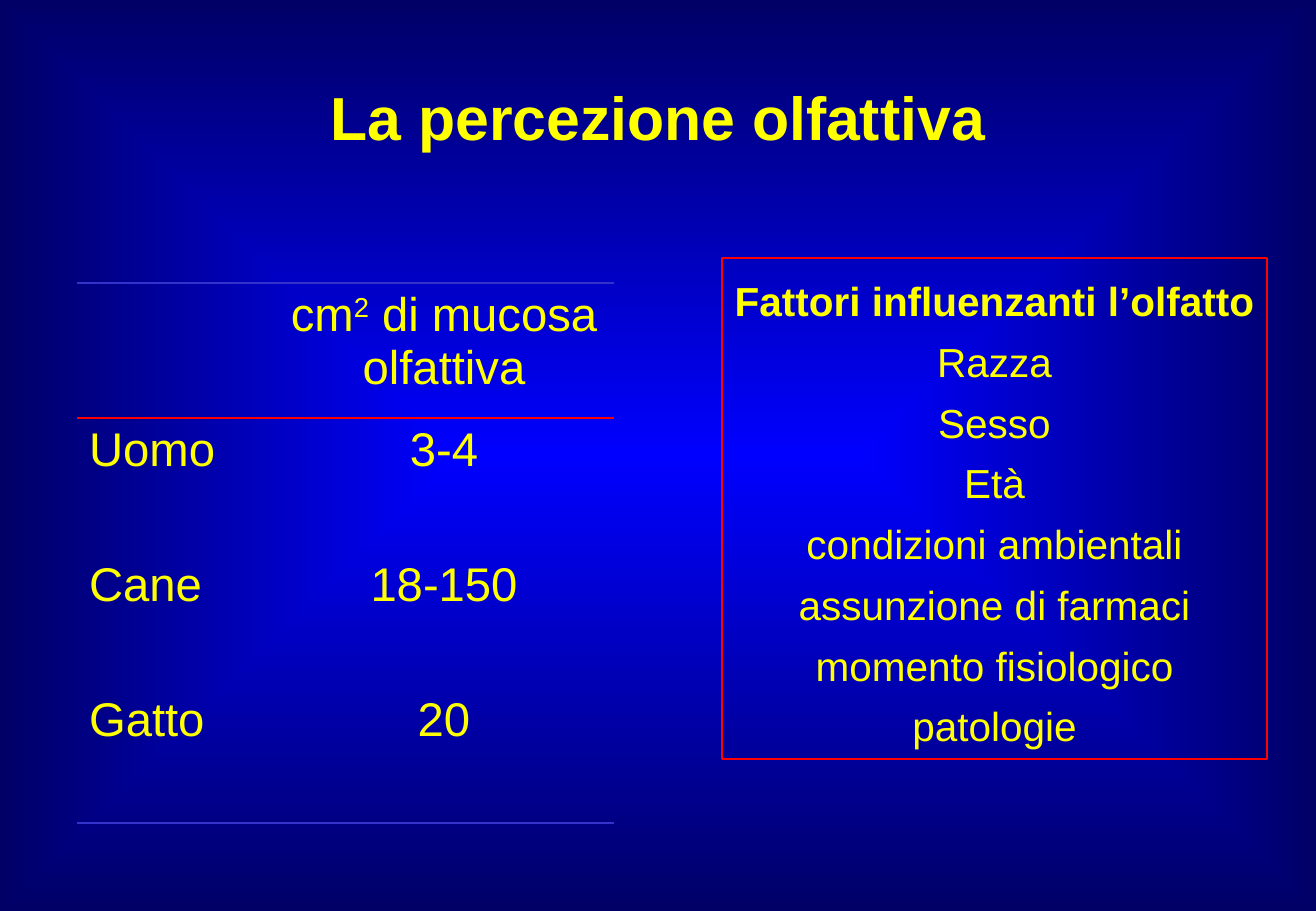
from lxml.etree import SubElement
from pptx import Presentation
from pptx.dml.color import RGBColor
from pptx.enum.shapes import MSO_SHAPE
from pptx.enum.text import MSO_ANCHOR, MSO_AUTO_SIZE, PP_ALIGN
from pptx.oxml import parse_xml
from pptx.oxml.ns import nsdecls, qn
from pptx.util import Pt

PX = 7526  # EMU per px
THEME = {
    "font": "Arial", "text": "FFFF00", "red": "FF0000", "rule": "3333CC",
    "glow": "0000FF", "edge": "000066",
    "title": 36, "cell": 28, "list": 24,
}
NO_GRID = "{2D5ABB26-0587-4C30-8999-92F81FD0307C}"


def style(run, size, bold=False):
    look = {"name": THEME["font"], "size": Pt(THEME[size]), "bold": bold}
    for key, value in look.items():
        setattr(run.font, key, value)
    run.font.color.rgb = RGBColor.from_string(THEME["text"])


def border(cell, side, color):
    """Give one side of a cell a 1 pt line, or none when color is None."""
    line = SubElement(cell._tc.get_or_add_tcPr(), qn(f"a:ln{side}"), w=str(Pt(1)))
    if color:
        fill = SubElement(line, qn("a:solidFill"))
        SubElement(fill, qn("a:srgbClr"), val=THEME[color])
    else:
        SubElement(line, qn("a:noFill"))


deck = Presentation()
deck.slide_width, deck.slide_height = 1316 * PX, 911 * PX
slide = deck.slides.add_slide(deck.slide_layouts[5])

# Background glow from the centre
fill = slide.background.fill
fill.gradient()
for stop, name, pos in zip(fill.gradient_stops, ("glow", "edge"), (0, 1)):
    stop.color.rgb = RGBColor.from_string(THEME[name])
    stop.position = pos
grad = slide._element.find(".//" + qn("a:gradFill"))
grad.replace(grad.find(qn("a:lin")), parse_xml(
    f'<a:path {nsdecls("a")} path="shape">'
    '<a:fillToRect l="50000" t="50000" r="50000" b="50000"/></a:path>'))

# Title
title = slide.shapes.title
place = {"left": 22, "top": 40, "width": 1272, "height": 152}
for key, value in place.items():
    setattr(title, key, value * PX)
frame = title.text_frame
frame.vertical_anchor = MSO_ANCHOR.MIDDLE
para = frame.paragraphs[0]
para.alignment = PP_ALIGN.CENTER
run = para.add_run()
run.text = "La percezione olfattiva"
style(run, "title", True)

# Table of olfactory mucosa; each cell is a list of runs
rows = [
    ([], ["cm", "2", " di mucosa olfattiva"]),
    (["Uomo"], ["3-4"]),
    (["Cane"], ["18-150"]),
    (["Gatto"], ["20"]),
]
edges = ["rule", "red", None, None, "rule"]
table = slide.shapes.add_table(
    4, 2, 77 * PX, 283 * PX, 537 * PX, 540 * PX).table
table.first_row = table.horz_banding = False
table._tbl.tblPr.find(qn("a:tableStyleId")).text = NO_GRID
for col, width in zip(table.columns, (197, 340)):
    col.width = width * PX
for r, row in enumerate(rows):
    for c, parts in enumerate(row):
        cell = table.cell(r, c)
        sides = {"L": None, "R": None, "T": edges[r], "B": edges[r + 1]}
        for side, color in sides.items():
            border(cell, side, color)
        cell.fill.background()
        para = cell.text_frame.paragraphs[0]
        para.alignment = PP_ALIGN.CENTER if c else PP_ALIGN.LEFT
        for i, part in enumerate(parts):
            run = para.add_run()
            run.text = part
            style(run, "cell")
            if i == 1:
                run._r.get_or_add_rPr().set("baseline", "30000")

# Framed list of factors
factors = [
    "Fattori influenzanti l’olfatto", "Razza", "Sesso", "Età",
    "condizioni ambientali", "assunzione di farmaci",
    "momento fisiologico", "patologie",
]
box = slide.shapes.add_shape(
    MSO_SHAPE.RECTANGLE, 722 * PX, 258 * PX, 545 * PX, 501 * PX)
box.shadow.inherit = False
box.fill.background()
box.line.color.rgb = RGBColor.from_string(THEME["red"])
box.line.width = Pt(1.5)
frame = box.text_frame
setup = {"word_wrap": False, "auto_size": MSO_AUTO_SIZE.SHAPE_TO_FIT_TEXT,
         "vertical_anchor": MSO_ANCHOR.TOP}
for key, value in setup.items():
    setattr(frame, key, value)
for i, factor in enumerate(factors):
    para = frame.add_paragraph() if i else frame.paragraphs[0]
    para.alignment = PP_ALIGN.CENTER
    para.line_spacing = 1.25
    run = para.add_run()
    run.text = factor
    style(run, "list", i == 0)

deck.save("out.pptx")
